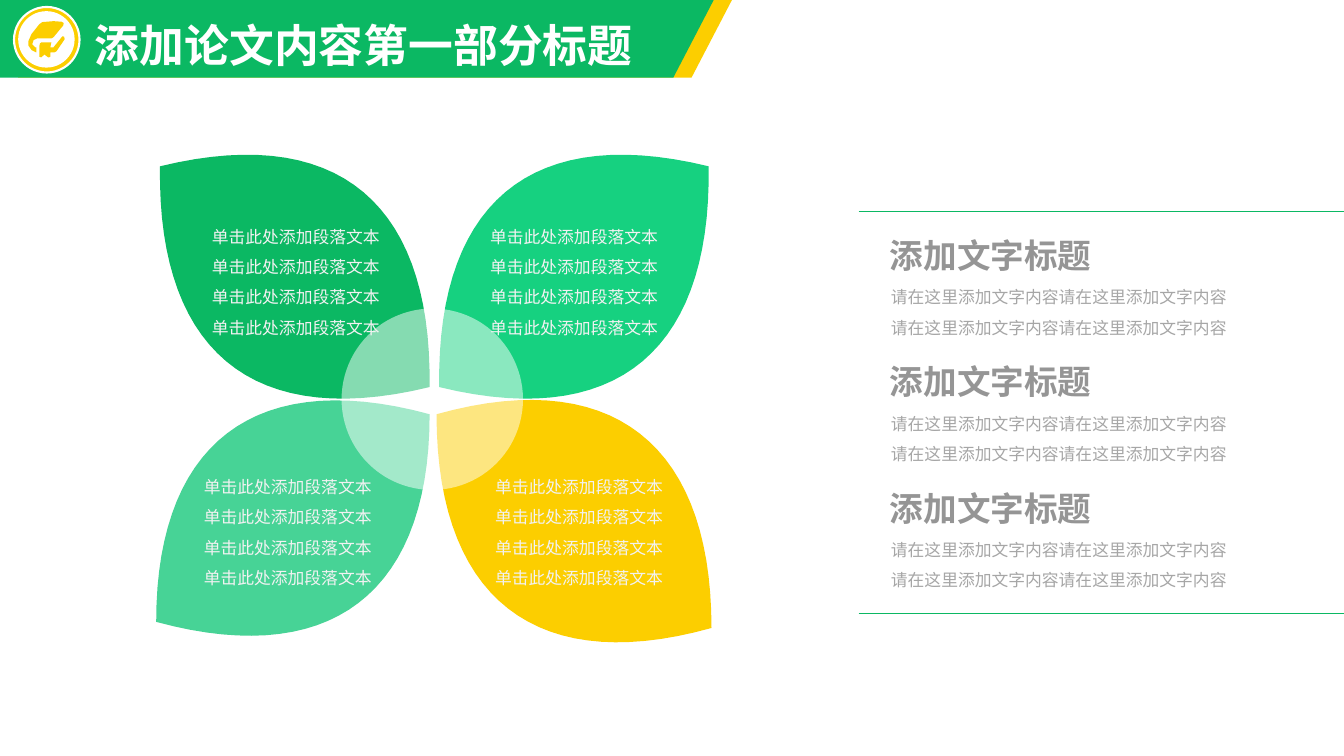
from pptx import Presentation
from pptx.util import Pt
from pptx.dml.color import RGBColor
from pptx.enum.shapes import MSO_SHAPE, MSO_CONNECTOR
from pptx.enum.text import PP_ALIGN, MSO_ANCHOR, MSO_AUTO_SIZE
from pptx.oxml.ns import qn
from lxml.etree import SubElement

HUES = {"green": "0BB863", "mint": "16D180", "pale": "47D396", "gold": "FCCE00",
        "white": "FFFFFF", "light": "F2F2F2", "head": "959595", "body": "A6A6A6"}

deck = Presentation()
deck.slide_width, deck.slide_height = Pt(960), Pt(540)
slide = deck.slides.add_slide(deck.slide_layouts[5])
shapes = slide.shapes


def paint(shape, hue):
    shape.shadow.inherit = False
    shape.fill.solid()
    shape.fill.fore_color.rgb = RGBColor.from_string(HUES[hue])
    shape.line.fill.background()
    return shape


def write(box, place, text, hue, look, gaps, anchor=MSO_ANCHOR.TOP):
    box.left, box.top, box.width, box.height = [Pt(v) for v in place]
    frame = box.text_frame
    frame.word_wrap = True
    frame.auto_size = MSO_AUTO_SIZE.NONE
    frame.vertical_anchor = anchor
    para = frame.paragraphs[0]
    run = para.add_run()
    run.text = text
    run.font.color.rgb = RGBColor.from_string(HUES[hue])
    for key, val in look.items():
        setattr(run.font, key, val)
    for key, val in gaps.items():
        setattr(para, key, val)


# Title band
for left, hue in ((13, "gold"), (0, "green")):
    pen = shapes.build_freeform(Pt(left), 0, scale=1.0)
    ends = ((left + 509.8, 0), (left + 481, 55.4), (left, 55.4))
    pen.add_line_segments([(Pt(x), Pt(y)) for x, y in ends])
    if left:
        pen.move_to(Pt(left), 0)
    paint(pen.convert_to_shape(), hue)

title = shapes.title
title.element.getparent().append(title.element)
write(title, (60.5, -10, 449.3, 58.3), "添加论文内容第一部分标题", "white",
      {"size": Pt(32), "bold": True, "name": "Arial"},
      {"line_spacing": 1.5, "alignment": PP_ALIGN.LEFT})

# Badge
for left, top, size, hue in ((10, 5, 46.8, "gold"), (13, 8, 40.3, "white")):
    disc = paint(shapes.add_shape(MSO_SHAPE.OVAL, Pt(left), Pt(top), Pt(size), Pt(size)), hue)
    if hue == "gold":
        disc.line.color.rgb = RGBColor.from_string(HUES["white"])
        disc.line.width = Pt(1.5)

scroll = [(44.6, 25.9), (45.8, 26.2), (46.2, 28), (40.3, 36.7), (39, 37.4), (36, 37.4),
          (36, 40.3), (35.2, 41), (34.5, 41), (31.7, 38.9), (29.5, 41), (28.1, 40.5),
          (28.1, 33), (28.6, 31), (29.6, 30.2), (36.7, 30.2), (36, 33.8), (38.2, 33.8)]
cap = [(38.2, 15.1), (43.9, 15.5), (45.4, 16.4), (45.3, 18), (38.2, 26.6), (36.7, 27.4),
       (26.6, 27.4), (24, 28.6), (23, 31.7), (25.2, 33.8), (25.9, 33.8), (25.9, 37.4),
       (22.6, 35.8), (20.2, 32.4), (20.2, 29.5), (22.5, 24.3), (28.1, 17.3), (30.2, 15.8)]
for outline in (scroll, cap):
    dots = [(Pt(x), Pt(y)) for x, y in outline]
    pen = shapes.build_freeform(*dots[0], scale=1.0)
    pen.add_line_segments(dots[1:])
    paint(pen.convert_to_shape(), "gold")

# Petals: a curve from outer to inner tip, then the same curve turned half round
upper = ((0, 0), (0.67, -0.2), (1.01, 0.18), (1, 1))
lower = ((0, 0), (0.64, -0.23), (1, 0.14), (1, 1))
petals = (
    ((506.2, 118.8), (313.7, 276.5), upper, "mint"),
    ((111.6, 444.2), (306.9, 295.9), lower, "pale"),
    ((508.2, 448.6), (311.8, 295.9), lower, "gold"),
    ((114.3, 118.8), (306.9, 276.5), upper, "green"),
)
STEPS = 30
for outer, inner, bend, hue in petals:
    arc = []
    for step in range(STEPS + 1):
        t = step / STEPS
        parts = ((1 - t) ** 3, 3 * t * (1 - t) ** 2, 3 * t * t * (1 - t), t ** 3)
        arc.append([sum(w * p[i] for w, p in zip(parts, bend)) for i in (0, 1)])
    arc += [(1 - u, 1 - v) for u, v in arc[1:]]
    dots = [[Pt(a + f * (b - a)) for a, b, f in zip(outer, inner, dot)] for dot in arc]
    pen = shapes.build_freeform(*dots[0], scale=1.0)
    pen.add_line_segments(dots[1:])
    paint(pen.convert_to_shape(), hue)

# Half-clear hub
hub = paint(shapes.add_shape(MSO_SHAPE.OVAL, Pt(244), Pt(220.4), Pt(129.6), Pt(129.6)), "white")
tint = hub.fill._xPr.find(qn("a:solidFill"))[0]
SubElement(tint, qn("a:alpha"), val="50000")

# Petal texts
for left, top in ((143.3, 151.2), (342, 151.2), (345.6, 329.8), (137.5, 329.8)):
    write(shapes.add_textbox(0, 0, 0, 0), (left, top, 136.1, 94.3),
          "单击此处添加段落文本" * 4, "light",
          {"size": Pt(12), "name": "Noto Sans CJK SC"},
          {"line_spacing": 1.5, "alignment": PP_ALIGN.CENTER})

# Right-hand items
for row in range(3):
    shift = row * 90.2
    write(shapes.add_textbox(0, 0, 0, 0), (629.3, 194.4 + shift, 262.8, 62.6),
          "请在这里添加文字内容" * 4, "body", {"size": Pt(12), "name": "Arial"},
          {"line_spacing": 1.5, "space_before": Pt(2.4)})
    write(shapes.add_textbox(0, 0, 0, 0), (628.6, 161.3 + shift, 226.8, 41.8),
          "添加文字标题", "head", {"size": Pt(24), "bold": True, "name": "Arial"},
          {}, MSO_ANCHOR.MIDDLE)

# Rules above and below the items
for y in (151.2, 437.8):
    rule = shapes.add_connector(MSO_CONNECTOR.STRAIGHT, Pt(613.4), Pt(y), Pt(960), Pt(y))
    rule.line.color.rgb = RGBColor.from_string(HUES["green"])
    rule.line.width = Pt(0.5)
    SubElement(rule.element.spPr, qn("a:effectLst"))

deck.save("out.pptx")
